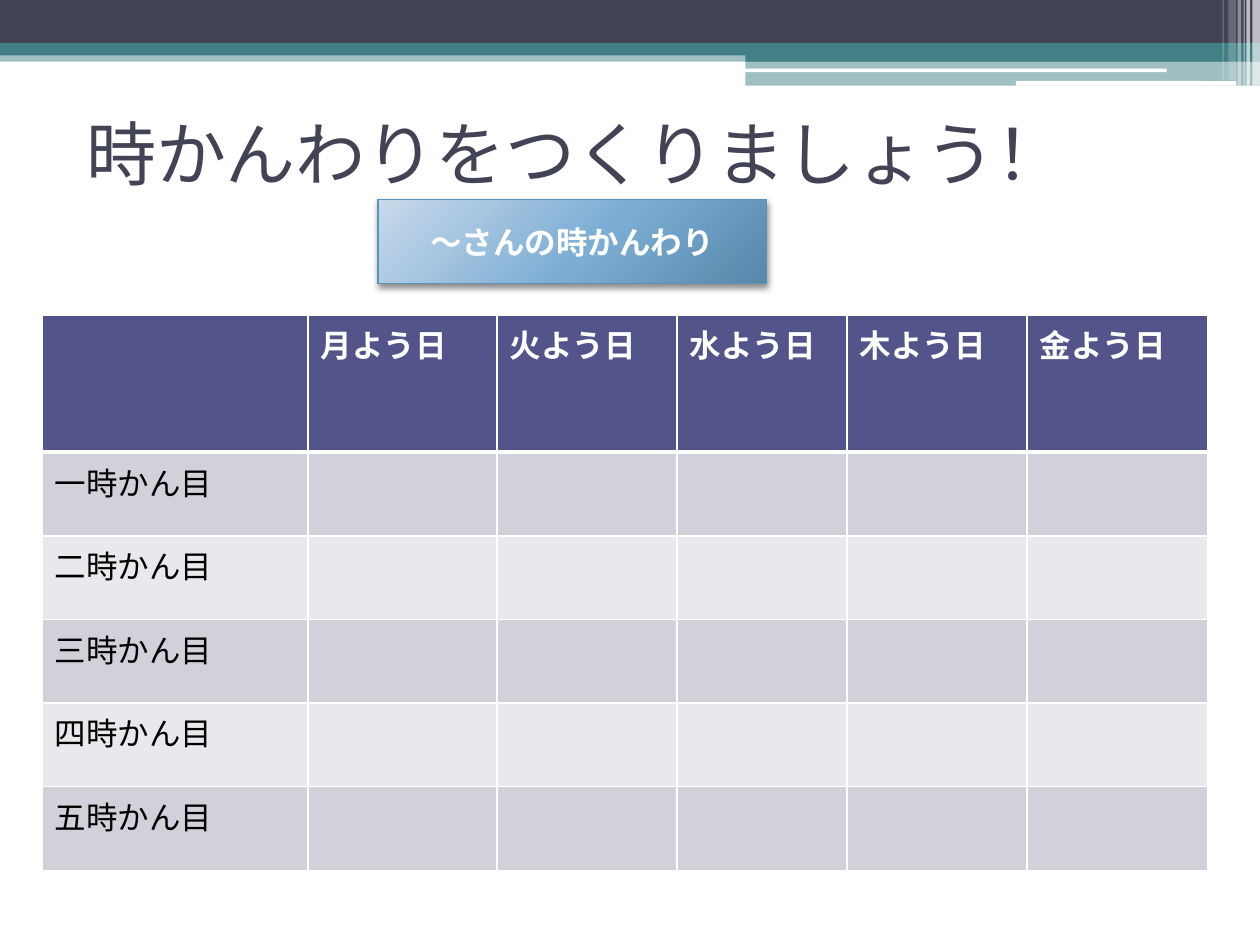
from lxml.etree import SubElement
from pptx import Presentation
from pptx.dml.color import RGBColor
from pptx.enum.shapes import MSO_SHAPE
from pptx.enum.text import MSO_ANCHOR, PP_ALIGN
from pptx.oxml import parse_xml
from pptx.oxml.ns import nsdecls, qn
from pptx.util import Pt

WHITE = RGBColor(0xFF, 0xFF, 0xFF)
BLACK = RGBColor(0x00, 0x00, 0x00)
SLATE = RGBColor(0x42, 0x44, 0x56)
TEAL = RGBColor(0x43, 0x80, 0x86)
VIOLET = RGBColor(0x53, 0x54, 0x8A)
BAND_DARK = RGBColor(0xD1, 0xD1, 0xDA)
BAND_LIGHT = RGBColor(0xE9, 0xE9, 0xED)
LABEL_EDGE = RGBColor(0x5C, 0x92, 0xB5)
LABEL_STOPS = [
    (0, RGBColor(0xC7, 0xD9, 0xEA)),
    (55, RGBColor(0x7C, 0xAD, 0xD4)),
    (100, RGBColor(0x56, 0x88, 0xA9)),
]

HEADER_BANDS = [
    (0, 28.8, 720, 6.5, TEAL, 50),
    (0, 0, 720, 24.5, SLATE, 100),
    (0, 24.5, 720, 7.2, TEAL, 100),
    (426, 28.1, 294, 7.2, TEAL, 100),
    (426, 34.8, 294, 14.2, TEAL, 50),
]
HEADER_GAPS = [(425.5, 39.2, 241.2, 2), (580.5, 46.3, 126, 2.7)]
HEADER_STRIPES = [
    (715.6, 4.4, 49, 65),
    (712.2, 2, 49, 65),
    (710.6, 0.7, 49, 60),
    (707.2, 2, 49, 40),
    (702, 4.3, 46, 20),
    (698.6, 0.7, 46, 30),
]

DAYS = ["月", "火", "水", "木", "金"]
PERIODS = ["一", "二", "三", "四", "五"]
COLUMN_WIDTHS = [152, 108, 103, 97, 103, 103]
HEADER_HEIGHT = 78.4
PERIOD_HEIGHT = 47.8


def write_text(text_frame, text, size=18, font="Cambria", color=BLACK,
               bold=False, align=PP_ALIGN.LEFT):
    paragraph = text_frame.paragraphs[0]
    paragraph.alignment = align
    run = paragraph.add_run()
    run.text = text
    run.font.size = Pt(size)
    run.font.name = font
    run.font.bold = bold
    run.font.color.rgb = color


def add_bar(slide, left, top, width, height, color, opacity=100,
            kind=MSO_SHAPE.RECTANGLE):
    shape = slide.shapes.add_shape(kind, Pt(left), Pt(top), Pt(width), Pt(height))
    shape.shadow.inherit = False
    shape.line.fill.background()
    shape.fill.solid()
    shape.fill.fore_color.rgb = color
    if opacity < 100:
        fill_color = shape._element.spPr.find(qn("a:solidFill"))[0]
        SubElement(fill_color, qn("a:alpha"), val=str(opacity * 1000))


def add_header(slide):
    for band in HEADER_BANDS:
        add_bar(slide, *band)
    for gap in HEADER_GAPS:
        add_bar(slide, *gap, WHITE, kind=MSO_SHAPE.ROUNDED_RECTANGLE)
    for left, width, height, opacity in HEADER_STRIPES:
        add_bar(slide, left, 0, width, height, WHITE, opacity)


def format_title(slide, text):
    title = slide.shapes.title
    title.left, title.top, title.width, title.height = Pt(42), Pt(54), Pt(648), Pt(66)
    title.text_frame.vertical_anchor = MSO_ANCHOR.MIDDLE
    write_text(title.text_frame, text, size=40, font="Cabin", color=SLATE)
    slide.shapes._spTree.append(title._element)


def set_borders(cell, top, bottom):
    properties = cell._tc.get_or_add_tcPr()
    for side, width in (("L", 1), ("R", 1), ("T", top), ("B", bottom)):
        line = SubElement(properties, qn(f"a:ln{side}"), w=str(Pt(width)))
        fill = SubElement(line, qn("a:solidFill"))
        SubElement(fill, qn("a:srgbClr"), val=str(WHITE))


def add_timetable(slide):
    rows, columns = len(PERIODS) + 1, len(COLUMN_WIDTHS)
    height = HEADER_HEIGHT + PERIOD_HEIGHT * len(PERIODS)
    frame = slide.shapes.add_table(
        rows, columns, Pt(24), Pt(180), Pt(sum(COLUMN_WIDTHS)), Pt(height))
    table = frame.table
    for column, width in zip(table.columns, COLUMN_WIDTHS):
        column.width = Pt(width)
    for index, row in enumerate(table.rows):
        row.height = Pt(PERIOD_HEIGHT if index else HEADER_HEIGHT)
        color = (BAND_DARK if index % 2 else BAND_LIGHT) if index else VIOLET
        for cell in row.cells:
            set_borders(cell, top=3 if index == 1 else 1, bottom=1 if index else 3)
            cell.fill.solid()
            cell.fill.fore_color.rgb = color
    for index, day in enumerate(DAYS, 1):
        write_text(table.cell(0, index).text_frame, f"{day}よう日", color=WHITE, bold=True)
    for index, period in enumerate(PERIODS, 1):
        write_text(table.cell(index, 0).text_frame, f"{period}時かん目")


def add_name_label(slide, text):
    shape = slide.shapes.add_shape(
        MSO_SHAPE.RECTANGLE, Pt(216), Pt(114), Pt(222), Pt(48))
    shape.line.color.rgb = LABEL_EDGE
    shape.line.width = Pt(0.75)
    stops = "".join(
        f'<a:gs pos="{position * 1000}"><a:srgbClr val="{color}"/></a:gs>'
        for position, color in LABEL_STOPS)
    gradient = parse_xml(
        f'<a:gradFill {nsdecls("a")} rotWithShape="1"><a:gsLst>{stops}</a:gsLst>'
        '<a:path path="circle"><a:fillToRect l="-40000" t="-90000" r="140000" b="190000"/>'
        '</a:path></a:gradFill>')
    shadow = parse_xml(
        f'<a:effectLst {nsdecls("a")}><a:outerShdw blurRad="{Pt(4)}" dist="{Pt(2)}" '
        f'dir="5400000" rotWithShape="0"><a:srgbClr val="{BLACK}"><a:alpha val="45000"/>'
        '</a:srgbClr></a:outerShdw></a:effectLst>')
    outline = shape._element.spPr.find(qn("a:ln"))
    outline.addprevious(gradient)
    outline.addnext(shadow)
    shape.text_frame.word_wrap = True
    shape.text_frame.vertical_anchor = MSO_ANCHOR.MIDDLE
    write_text(shape.text_frame, text, color=WHITE, bold=True, align=PP_ALIGN.CENTER)


def main():
    presentation = Presentation()
    presentation.slide_width = Pt(720)
    presentation.slide_height = Pt(540)
    slide = presentation.slides.add_slide(presentation.slide_layouts[5])
    add_header(slide)
    format_title(slide, "時かんわりをつくりましょう！")
    add_timetable(slide)
    add_name_label(slide, "～さんの時かんわり")
    presentation.save("out.pptx")


if __name__ == "__main__":
    main()
